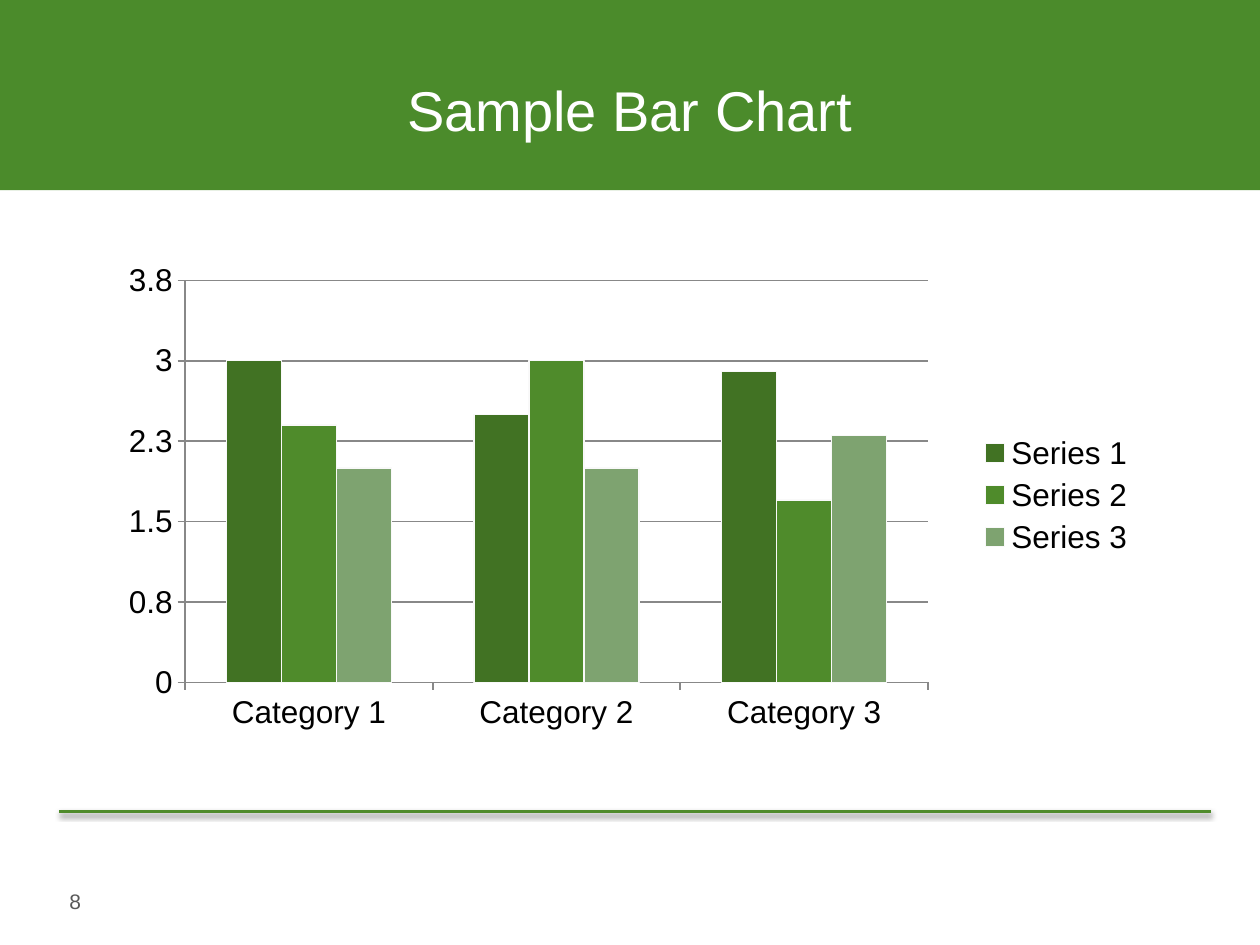
from lxml.etree import SubElement
from pptx import Presentation
from pptx.chart.data import CategoryChartData
from pptx.dml.color import RGBColor
from pptx.enum.chart import XL_CHART_TYPE, XL_LEGEND_POSITION, XL_TICK_MARK
from pptx.enum.shapes import MSO_CONNECTOR, MSO_SHAPE
from pptx.enum.text import MSO_ANCHOR, PP_ALIGN
from pptx.oxml import parse_xml
from pptx.oxml.ns import nsdecls, qn
from pptx.util import Inches, Pt

WIDE, HIGH = 10, 7.5
FONT = "Arial"
HUES = {
    "band": "4B8B2B", "rule": "4F8B2B", "white": "FFFFFF", "black": "000000",
    "note": "595959", "grid": "888888", "edge": "F9F9F9",
}
CATS = ["Category 1", "Category 2", "Category 3"]
ROWS = [
    ("Series 1", "417223", (3, 2.5, 2.9)),
    ("Series 2", "4F8B2B", (2.4, 3, 1.7)),
    ("Series 3", "7EA370", (2, 2, 2.3)),
]
PLOT = {"x": 0.076, "y": 0.076, "w": 0.713, "h": 0.794}


def hue(name):
    """Return the colour for a name or a hex string."""
    return RGBColor.from_string(HUES.get(name, name))


def style(font, size, name):
    """Set face, size and colour of a font."""
    font.name, font.size = FONT, Pt(size)
    font.color.rgb = hue(name)


def stroke(line, name, width):
    """Set colour and width of a line."""
    line.color.rgb = hue(name)
    line.width = Pt(width)


def write(shape, text, size, name, align, wrap=True):
    """Put one styled run into a shape."""
    frame = shape.text_frame
    frame.word_wrap = wrap
    frame.margin_left = frame.margin_right = Inches(0.05)
    frame.margin_top = frame.margin_bottom = Inches(0.05)
    para = frame.paragraphs[0]
    para.alignment = align
    run = para.add_run()
    run.text = text
    style(run.font, size, name)
    return frame


def add_box(slide, *area):
    """Add a plain green rectangle."""
    box = slide.shapes.add_shape(MSO_SHAPE.RECTANGLE, *map(Inches, area))
    box.shadow.inherit = False
    box.fill.solid()
    box.fill.fore_color.rgb = hue("band")
    box.line.fill.background()
    return box


def add_title(slide, text):
    """Add the title over the band."""
    box = add_box(slide, WIDE * 0.05, HIGH * 0.04, WIDE * 0.9, HIGH * 0.15)
    stroke(box.line, "band", 0.25)
    frame = write(box, text, 32, "white", PP_ALIGN.CENTER)
    frame.vertical_anchor = MSO_ANCHOR.MIDDLE


def add_rule(slide, left, right, top):
    """Add the green rule with its soft shadow."""
    ends = map(Inches, (left, top, right, top))
    rule = slide.shapes.add_connector(MSO_CONNECTOR.STRAIGHT, *ends)
    stroke(rule.line, "rule", 2)
    rule._element.spPr.append(parse_xml(
        f'<a:effectLst {nsdecls("a")}><a:outerShdw blurRad="{Pt(3)}" '
        f'dist="{Pt(1.6)}" dir="5400000" rotWithShape="0">'
        f'<a:srgbClr val="{HUES["black"]}"><a:alpha val="38000"/></a:srgbClr>'
        '</a:outerShdw></a:effectLst>'))


def set_axis(axis):
    """Style the line, ticks and labels of an axis."""
    axis.major_tick_mark = XL_TICK_MARK.OUTSIDE
    axis.minor_tick_mark = XL_TICK_MARK.NONE
    stroke(axis.format.line, "grid", 1)
    style(axis.tick_labels.font, 18, "black")


def set_plot(chart):
    """Fix the inner plot area within the chart."""
    area = chart._chartSpace.chart.plotArea
    for old in area.findall(qn("c:layout")):
        area.remove(old)
    layout = parse_xml(f'<c:layout {nsdecls("c")}><c:manualLayout/></c:layout>')
    area.insert(0, layout)
    parts = [("layoutTarget", "inner"), ("xMode", "edge"), ("yMode", "edge")]
    for tag, val in parts + list(PLOT.items()):
        SubElement(layout[0], qn(f"c:{tag}")).set("val", str(val))


def add_bars(slide, *area):
    """Add the clustered column chart."""
    data = CategoryChartData()
    data.categories = CATS
    for name, _, vals in ROWS:
        data.add_series(name, vals)
    kind = XL_CHART_TYPE.COLUMN_CLUSTERED
    chart = slide.shapes.add_chart(kind, *map(Inches, area), data).chart
    style(chart.font, 10, "black")
    chart.has_title = False
    set_plot(chart)
    plot = chart.plots[0]
    plot.gap_width, plot.overlap, plot.vary_by_categories = 150, 0, False
    for bars, (_, tone, _) in zip(plot.series, ROWS):
        bars.format.fill.solid()
        bars.format.fill.fore_color.rgb = hue(tone)
        stroke(bars.format.line, "edge", 0.75)
    set_axis(chart.category_axis)
    axis = chart.value_axis
    set_axis(axis)
    axis.minimum_scale, axis.maximum_scale, axis.major_unit = 0, 3.75, 0.75
    axis.tick_labels.number_format = "0.#"
    axis.tick_labels.number_format_is_linked = False
    axis.has_major_gridlines = True
    stroke(axis.major_gridlines.format.line, "grid", 1)
    chart.has_legend = True
    chart.legend.position = XL_LEGEND_POSITION.RIGHT
    chart.legend.include_in_layout = True
    style(chart.legend.font, 18, "black")


def add_page(slide, text):
    """Add the page number at the foot."""
    area = map(Inches, (WIDE * 0.05, 7, WIDE * 0.03, 0.31))
    box = slide.shapes.add_textbox(*area)
    write(box, text, 12, "note", PP_ALIGN.LEFT, False)


def main():
    """Build and save the slide."""
    deck = Presentation()
    deck.slide_width, deck.slide_height = Inches(WIDE), Inches(HIGH)
    slide = deck.slides.add_slide(deck.slide_layouts[6])
    add_box(slide, 0, 0, WIDE, 1.51)
    add_rule(slide, 0.47, 9.61, 6.44)
    add_page(slide, "8")
    add_bars(slide, 0.84, 1.92, 8.27, 4.02)
    add_title(slide, "Sample Bar Chart")
    deck.save("out.pptx")


if __name__ == "__main__":
    main()
